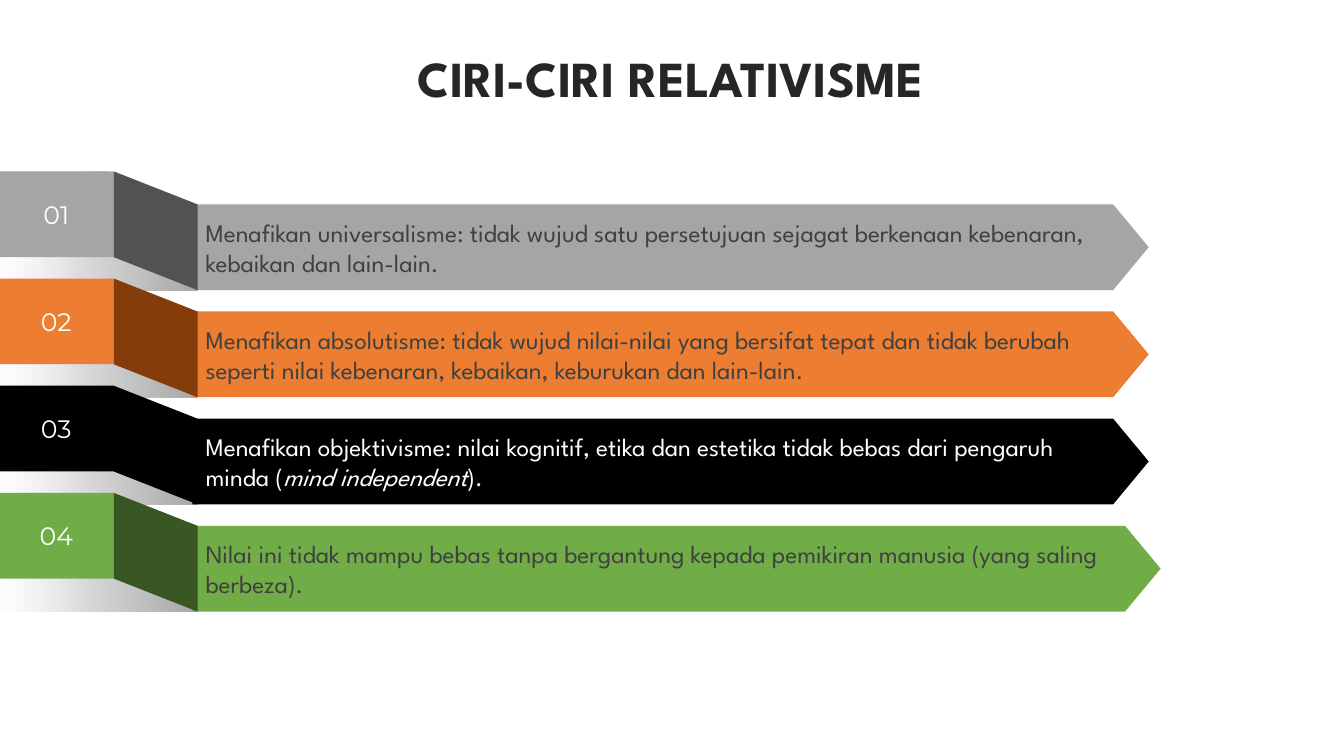
from dataclasses import dataclass

from lxml import etree
from pptx import Presentation
from pptx import util as u
from pptx.dml.color import RGBColor
from pptx.enum import shapes, text
from pptx.oxml.ns import qn

Cm = u.Cm
Kind = shapes.MSO_SHAPE


@dataclass(frozen=True)
class Theme:
    head: str = "League Spartan"
    num: str = "Montserrat"
    title: int = 36
    body: int = 18
    gap: int = 10
    ink: str = "262626"
    grey: str = "404040"
    white: str = "FFFFFF"
    # position, colour, opacity (all in percent but the colour)
    shade: tuple = ((0, "A6A6A6", 100), (50, "DDDDDD", 100),
                    (93, "FFFFFF", 0), (100, "FFFFFF", 0))


class Deck:
    """Holds the theme and the slide being drawn; lengths are in cm."""

    def __init__(self, prs, theme):
        self.theme = theme
        self.slide = prs.slides.add_slide(prs.slide_layouts[6])

    def label(self, shape, runs, size, color, face, pad=0.25, bold=False,
              align=text.PP_ALIGN.CENTER, before=0):
        """Fill the shape with one paragraph; runs are (words, italic) pairs."""
        frame = shape.text_frame
        form = dict(word_wrap=True, vertical_anchor=text.MSO_ANCHOR.MIDDLE,
                    margin_left=Cm(pad), margin_right=Cm(pad),
                    margin_top=Cm(0.13), margin_bottom=Cm(0.13))
        for key, val in form.items():
            setattr(frame, key, val)
        para = frame.paragraphs[0]
        para.alignment = align
        para.space_before = u.Pt(before)
        for words, slant in runs:
            run = para.add_run()
            run.text = words
            form = dict(name=face, size=u.Pt(size), bold=bold, italic=slant)
            for key, val in form.items():
                setattr(run.font, key, val)
            run.font.color.rgb = RGBColor.from_string(color)

    def block(self, kind, box, color, adj=None, turn=0):
        shape = self.slide.shapes.add_shape(kind, *map(Cm, box))
        shape.shadow.inherit = False
        shape.fill.solid()
        shape.fill.fore_color.rgb = RGBColor.from_string(color)
        shape.line.fill.background()
        shape.rotation = turn
        if adj is not None:
            shape.adjustments[0] = adj
        return shape

    def shade(self, points):
        """Draw an outline that fades out to the left."""
        start, *rest = [(Cm(x), Cm(y)) for x, y in points]
        pen = self.slide.shapes.build_freeform(*start)
        pen.add_line_segments(rest, close=True)
        shape = pen.convert_to_shape()
        shape.shadow.inherit = False
        shape.line.fill.background()
        shape.fill.gradient()
        shape.fill.gradient_angle = 180
        stops = next(shape.element.iter(qn("a:gsLst")))
        for old in list(stops):
            stops.remove(old)
        for pos, color, clear in self.theme.shade:
            stop = etree.SubElement(stops, qn("a:gs"), pos=str(pos * 1000))
            tint = etree.SubElement(stop, qn("a:srgbClr"), val=color)
            etree.SubElement(tint, qn("a:alpha"), val=str(clear * 1000))

    def title(self, words, box):
        t = self.theme
        shape = self.slide.shapes.add_textbox(*map(Cm, box))
        self.label(shape, [(words, False)], t.title, t.ink, t.head, bold=True)

    def ribbon(self, num, top, color, dark, ink, runs, wide):
        """Draw one numbered tab that folds back into an arrow."""
        t = self.theme
        high, drop = 2.16, 0.83        # band height, fall of the fold
        tab, back = 2.87, 4.98         # right edges of tab and fold
        span, full = back - tab, high + drop
        base = top + full
        self.shade([(-1.02, top), (2.72, top), (back, base), (-1.02, base)])

        shape = self.block(Kind.RECTANGLE, (-0.03, top, tab + 0.03, high), color)
        self.label(shape, [(num, False)], t.body, t.white, t.num)

        shape = self.block(Kind.PENTAGON, (4.85, top + drop, wide, high),
                           color, 0.415)
        self.label(shape, runs, t.body, ink, t.head, pad=0.33,
                   align=text.PP_ALIGN.LEFT, before=t.gap)

        # turned by 270 degrees about its centre, so the sides swap
        left = (tab + back - full) / 2
        self.block(Kind.PARALLELOGRAM, (left, top + (full - span) / 2, full, span),
                   dark, drop / span, 270)


def main():
    prs = Presentation()
    prs.slide_width, prs.slide_height = Cm(33.87), Cm(19.05)
    theme = Theme()
    deck = Deck(prs, theme)
    rows = [
        ("A5A5A5", "525252", theme.grey, 24.1,
         [("Menafikan universalisme: tidak wujud satu persetujuan sejagat "
           "berkenaan kebenaran, kebaikan dan lain-lain.", False)]),
        ("ED7D31", "843C0B", theme.grey, 24.1,
         [("Menafikan absolutisme: tidak wujud nilai-nilai yang bersifat tepat "
           "dan tidak berubah seperti nilai kebenaran, kebaikan, keburukan "
           "dan lain-lain.", False)]),
        ("000000", "000000", theme.white, 24.1,
         [("Menafikan objektivisme: nilai kognitif, etika dan estetika tidak "
           "bebas dari pengaruh minda (", False),
          ("mind independent", True), (").", False)]),
        ("70AD47", "385723", theme.grey, 24.4,
         [("Nilai ini tidak mampu bebas tanpa bergantung kepada pemikiran "
           "manusia (yang saling berbeza).", False)]),
    ]
    for i, (color, dark, ink, wide, runs) in enumerate(rows):
        deck.ribbon(f"{i + 1:02}", 4.32 + 2.7 * i, color, dark, ink, runs, wide)
    deck.title("CIRI-CIRI RELATIVISME", (0.94, 0.43, 31.93, 3.05))
    prs.save("out.pptx")


if __name__ == "__main__":
    main()
